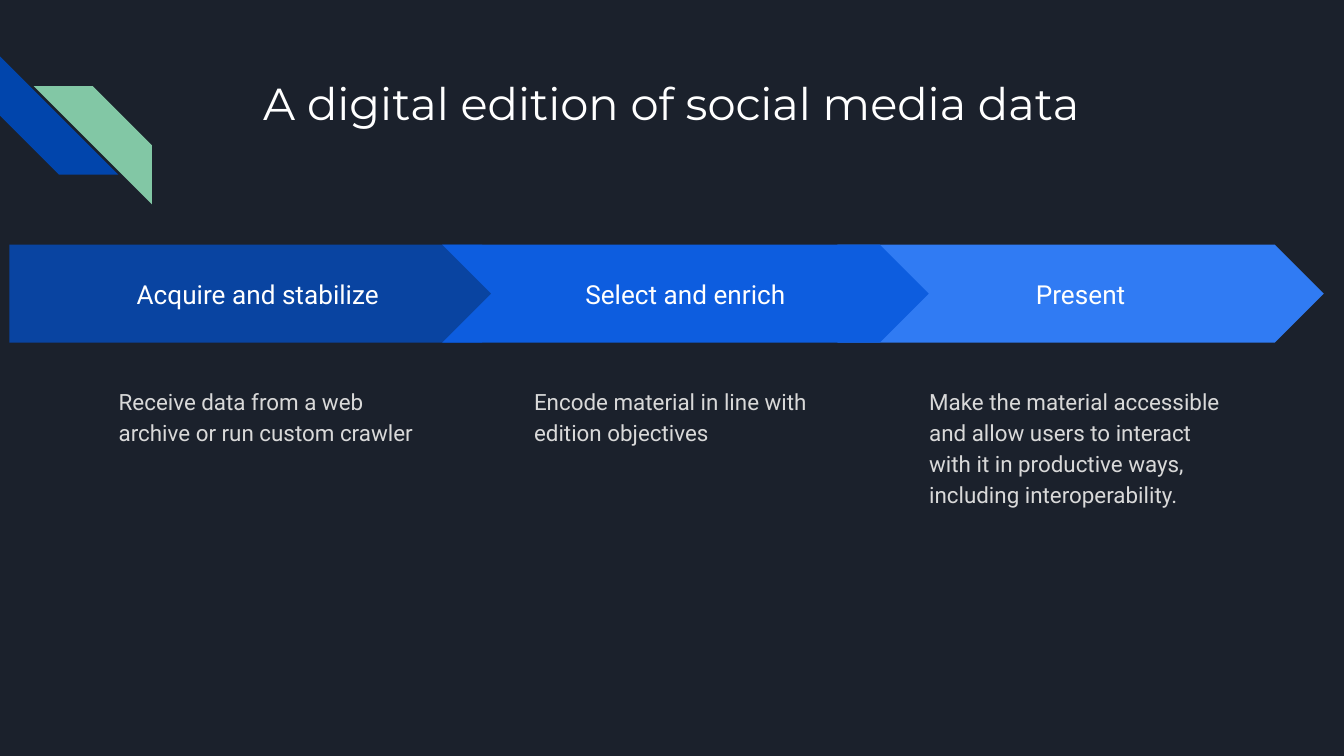
from pptx import Presentation
from pptx.dml.color import RGBColor
from pptx.enum import shapes, text
from pptx.util import Inches, Pt

NIGHT = RGBColor(0x1B, 0x21, 0x2C)
NAVY = RGBColor(0x01, 0x45, 0xAC)
MINT = RGBColor(0x82, 0xC7, 0xA5)
DEEP = RGBColor(0x09, 0x44, 0xA1)
BLUE = RGBColor(0x0D, 0x5D, 0xDF)
SKY = RGBColor(0x30, 0x7B, 0xF3)
WHITE = RGBColor(0xFF, 0xFF, 0xFF)
PALE = RGBColor(0xD9, 0xD9, 0xD9)
KIND = shapes.MSO_SHAPE
WIDE = 10
HIGH = WIDE * 9 / 16


def add_form(slide, kind, box, fill):
    form = slide.shapes.add_shape(kind, *map(Inches, box))
    form.shadow.inherit = False
    form.adjustments[0] = 0.5
    form.fill.solid()
    form.fill.fore_color.rgb = fill
    form.line.fill.background()
    return form


def write(shape, words, size, font, color, align=text.PP_ALIGN.LEFT,
          anchor=text.MSO_ANCHOR.TOP, space=1.0):
    frame = shape.text_frame
    frame.word_wrap = True
    frame.vertical_anchor = anchor
    frame.margin_left = frame.margin_right = Inches(0.1)
    frame.margin_top = frame.margin_bottom = Inches(0.1)
    para = frame.paragraphs[0]
    para.alignment = align
    para.line_spacing = space
    run = para.add_run()
    run.text = words
    run.font.size = Pt(size)
    run.font.name = font
    run.font.color.rgb = color


def add_mark(slide, left, top):
    side = 0.88
    for dx, dy, turn, fill in ((0, 0, 270, NAVY), (0.25, 0.22, 90, MINT)):
        stripe = add_form(slide, KIND.DIAGONAL_STRIPE,
                          (left + dx, top + dy, side, side), fill)
        stripe.rotation = turn


def add_title(slide, box, words):
    title = slide.shapes.add_textbox(*map(Inches, box))
    write(title, words, 24, "Montserrat", WHITE)


def add_stage(slide, box, kind, fill, name, detail):
    left, top, width, height = box
    bar, drop, column = 0.73, 0.94, 2.45
    arrow = add_form(slide, kind, (left, top, width, bar), fill)
    write(arrow, name, 14, "Roboto", WHITE, text.PP_ALIGN.CENTER,
          text.MSO_ANCHOR.MIDDLE)
    note = slide.shapes.add_textbox(
        Inches(left + (width - column) / 2), Inches(top + drop),
        Inches(column), Inches(height - drop))
    write(note, detail, 12, "Roboto", PALE, space=1.15)


def main():
    deck = Presentation()
    deck.slide_width, deck.slide_height = Inches(WIDE), Inches(HIGH)
    slide = deck.slides.add_slide(deck.slide_layouts[6])
    slide.background.fill.solid()
    slide.background.fill.fore_color.rgb = NIGHT

    add_mark(slide, 0, 0.42)
    add_title(slide, (1.86, 0.46, 6.29, 0.71),
              "A digital edition of social media data")
    stages = (
        (6.23, 3.62, KIND.CHEVRON, SKY, "Present",
         "Make the material accessible and allow users to interact "
         "with it in productive ways, including interoperability."),
        (0.07, 3.88, KIND.PENTAGON, DEEP, "Acquire and stabilize",
         "Receive data from a web archive or run custom crawler"),
        (3.29, 3.62, KIND.CHEVRON, BLUE, "Select and enrich",
         "Encode material in line with edition objectives"),
    )
    top = 1.82
    for left, width, *parts in stages:
        add_stage(slide, (left, top, width, HIGH - top), *parts)
    deck.save("out.pptx")


if __name__ == "__main__":
    main()
